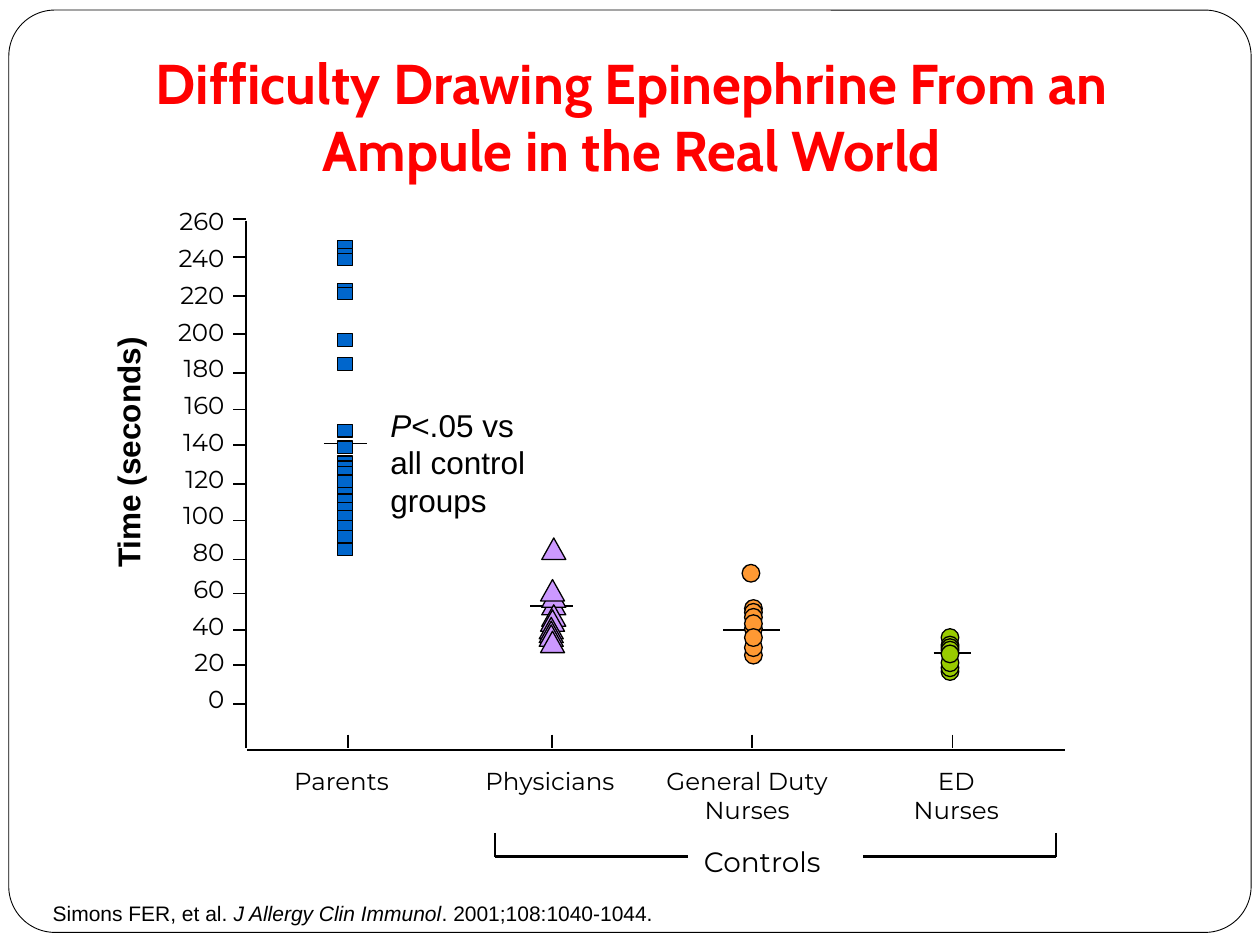
from pptx import Presentation
from pptx.dml.color import RGBColor
from pptx.enum.shapes import MSO_CONNECTOR, MSO_SHAPE
from pptx.enum.text import MSO_ANCHOR, MSO_AUTO_SIZE, PP_ALIGN
from pptx.oxml import parse_xml
from pptx.util import Cm, Pt

EFFECTS = '<a:effectLst xmlns:a="http://schemas.openxmlformats.org/drawingml/2006/main"/>'


def color(code):
    return RGBColor.from_string(code)


def inches(value):
    return Cm(value * 2.54)


class Painter:
    ink = "000000"
    label_font = "Montserrat"
    body_font = "Arial"

    def __init__(self, page):
        self.page = page

    def line(self, x1, y1, x2, y2, width=1):
        ends = [inches(value) for value in (x1, y1, x2, y2)]
        connector = self.page.shapes.add_connector(MSO_CONNECTOR.STRAIGHT, *ends)
        connector.line.color.rgb = color(self.ink)
        connector.line.width = Pt(width)
        connector._element.spPr.append(parse_xml(EFFECTS))

    def shape(self, kind, place, fill, width=0.75):
        item = self.page.shapes.add_shape(kind, *[inches(value) for value in place])
        item.shadow.inherit = False
        item.fill.solid()
        item.fill.fore_color.rgb = color(fill)
        item.line.color.rgb = color(self.ink)
        item.line.width = Pt(width)
        return item

    def markers(self, kind, size, fill, points):
        for point in points:
            self.shape(kind, (*point, *size), fill)

    def text(self, place, content, size, font=label_font, align=PP_ALIGN.CENTER,
             ink=ink, bold=False, wrap=False, spacing=None):
        box = self.page.shapes.add_textbox(*[inches(value) for value in place])
        frame = box.text_frame
        frame.text = content
        frame.word_wrap = wrap
        frame.auto_size = MSO_AUTO_SIZE.SHAPE_TO_FIT_TEXT
        for para in frame.paragraphs:
            para.alignment = align
            para.line_spacing = spacing
            parts = para.text.split("_")
            para.text = parts[0]
            for part in parts[1:]:
                para.add_run().text = part
            for index, span in enumerate(para.runs, start=0 if parts[0] else 1):
                span.font.name = font
                span.font.size = Pt(size)
                span.font.bold = bold
                span.font.italic = index % 2 == 1
                span.font.color.rgb = color(ink)
        return box


def draw_axes(painter):
    labels = "\n".join(str(value) for value in range(260, -1, -20))
    painter.text((1.29, 1.53, 0.59, 4.25), labels, 14, align=PP_ALIGN.RIGHT, spacing=1.25)
    painter.line(1.96, 5.95, 8.45, 5.95)
    painter.line(1.95, 1.75, 1.95, 5.94)
    for tick in (1.74, 2.04, 2.35, 2.65, 2.96, 3.25, 3.53,
                 3.84, 4.13, 4.44, 4.71, 5, 5.28, 5.59):
        painter.line(1.85, tick, 1.95, tick)
    for tick in (2.76, 4.38, 5.97, 7.56):
        painter.line(tick, 5.83, tick, 5.94)
    axis_title = painter.text((0, 3.39, 2.03, 0.4), "Time (seconds)", 18,
                              painter.body_font, PP_ALIGN.LEFT, bold=True)
    axis_title.rotation = 270
    for left, width, height, name in (
        (2.2, 1.02, 0.33, "Parents"),
        (3.69, 1.35, 0.33, "Physicians"),
        (5.13, 1.6, 0.57, "General Duty\nNurses"),
        (7.11, 0.96, 0.57, "ED\nNurses"),
    ):
        painter.text((left, 6.03, width, height), name, 14)


def draw_controls_bracket(painter):
    painter.text((5.43, 6.65, 1.24, 0.37), "Controls", 16)
    for outer, inner in ((3.93, 5.46), (8.38, 6.85)):
        painter.line(outer, 6.8, inner, 6.8, 1.5)
        painter.line(outer, 6.61, outer, 6.8)


def draw_groups(painter):
    painter.line(4.21, 4.81, 4.55, 4.81)
    painter.line(5.74, 5, 6.19, 5)
    painter.line(2.57, 3.52, 2.91, 3.52)
    parents = (2.84, 2.65, 2.25, 2.28, 1.91, 1.97, 2.01, 3.37, 3.5, 3.62,
               3.66, 3.7, 3.77, 3.87, 3.92, 3.99, 4.05, 4.13, 4.21, 4.31)
    painter.markers(MSO_SHAPE.RECTANGLE, (0.12, 0.1), "0066CC",
                    [(2.68, top) for top in parents])
    duty_nurses = (4.92, 4.76, 4.79, 4.83, 4.88, 5.13, 5.07, 4.99)
    painter.markers(MSO_SHAPE.OVAL, (0.14, 0.14), "FF9933",
                    [(5.89, 4.48)] + [(5.91, top) for top in duty_nurses])
    painter.line(7.41, 5.18, 7.71, 5.18)
    emergency_nurses = (4.99, 5.05, 5.07, 5.09, 5.26, 5.23, 5.19, 5.12)
    painter.markers(MSO_SHAPE.OVAL, (0.14, 0.14), "99CC00",
                    [(7.47, top) for top in emergency_nurses])
    physicians = [(4.3, 4.27), (4.3, 4.71), (4.3, 4.65), (4.29, 4.6), (4.3, 4.8),
                  (4.29, 4.84), (4.28, 4.9), (4.28, 4.93), (4.28, 4.96), (4.29, 5.01)]
    painter.markers(MSO_SHAPE.ISOSCELES_TRIANGLE, (0.19, 0.17), "CC99FF", physicians)


def main():
    deck = Presentation()
    deck.slide_width, deck.slide_height = Cm(25.4), Cm(19.05)
    painter = Painter(deck.slides.add_slide(deck.slide_layouts[6]))
    border = painter.shape(MSO_SHAPE.ROUNDED_RECTANGLE, (0.07, 0.08, 9.86, 7.32), "FFFFFF", 0.5)
    border.adjustments[0] = 0.05
    title = painter.text((0.53, 0.3, 8.97, 1.25),
                         "Difficulty Drawing Epinephrine From an Ampule in the Real World",
                         32, "Cabin", ink="FF0000", bold=True, wrap=True)
    title.text_frame.auto_size = MSO_AUTO_SIZE.NONE
    title.text_frame.vertical_anchor = MSO_ANCHOR.BOTTOM
    title.text_frame.margin_bottom = inches(0.1)
    draw_axes(painter)
    draw_controls_bracket(painter)
    draw_groups(painter)
    painter.text((3, 3.17, 2.1, 0.7), "_P_<.05 vs\nall control groups", 18,
                 painter.body_font, PP_ALIGN.LEFT)
    painter.text((0.32, 7.1, 6.33, 0.3),
                 "Simons FER, et al. _J Allergy Clin Immunol_. 2001;108:1040-1044.",
                 12, painter.body_font, PP_ALIGN.LEFT, wrap=True)
    deck.save("out.pptx")


if __name__ == "__main__":
    main()
